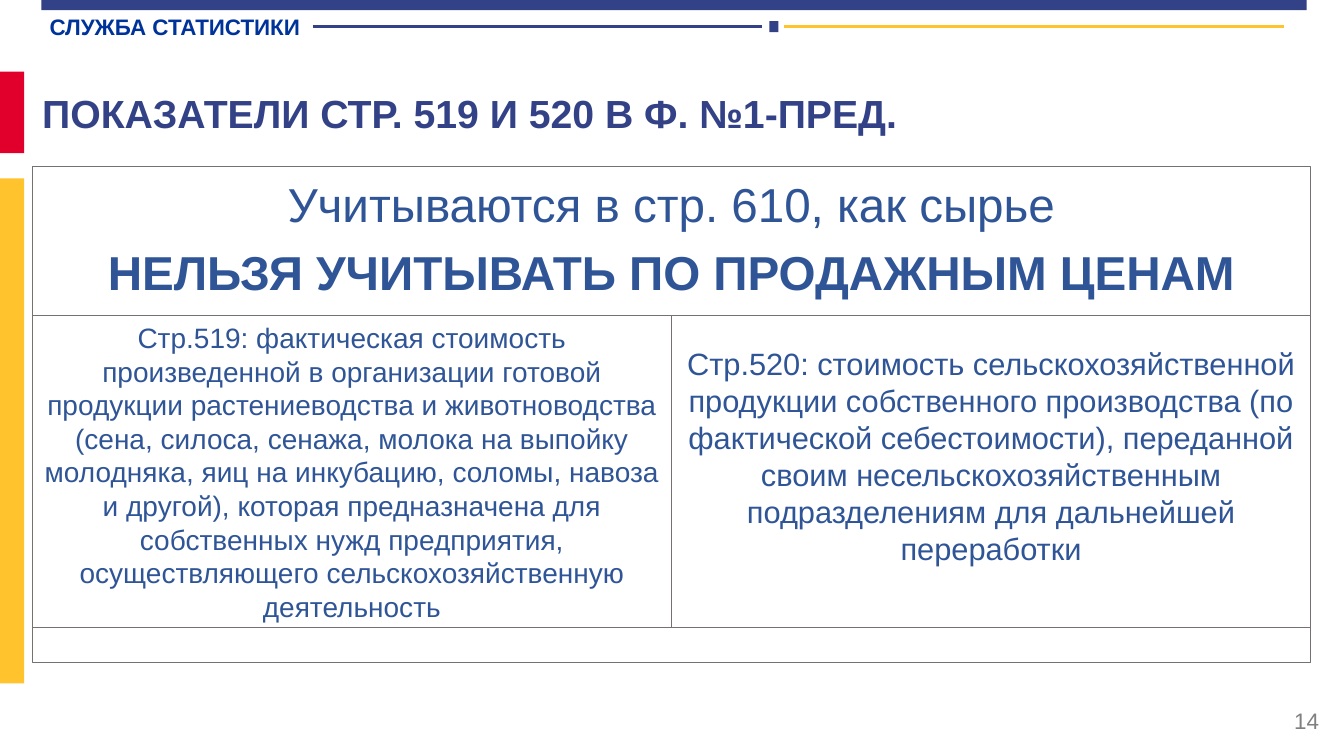
import pptx
import pptx.dml.color
import pptx.enum.shapes
import pptx.enum.text
import pptx.oxml.ns
import pptx.util
from lxml import etree

RGB = pptx.dml.color.RGBColor
NAVY = RGB(0x33, 0x42, 0x86)
RED = RGB(0xE1, 0x00, 0x2B)
YELLOW = RGB(0xFF, 0xC3, 0x2E)
BLUE = RGB(0x2F, 0x55, 0x97)
AGENCY_BLUE = RGB(0x00, 0x33, 0x99)
GRAY = RGB(0x80, 0x80, 0x80)
BORDER = RGB(0x76, 0x71, 0x71)
WHITE = RGB(0xFF, 0xFF, 0xFF)

ALIGN = pptx.enum.text.PP_ALIGN
ANCHOR = pptx.enum.text.MSO_ANCHOR

AGENCY = "СЛУЖБА СТАТИСТИКИ"
TITLE = "ПОКАЗАТЕЛИ СТР. 519 И 520 В Ф. №1-ПРЕД."
RULES = [("Учитываются в стр. 610, как сырье", False),
         ("НЕЛЬЗЯ УЧИТЫВАТЬ ПО ПРОДАЖНЫМ ЦЕНАМ", True)]
LINE_519 = ("Стр.519: фактическая стоимость произведенной в организации готовой "
            "продукции растениеводства и животноводства (сена, силоса, сенажа, "
            "молока на выпойку молодняка, яиц на инкубацию, соломы, навоза и другой), "
            "которая предназначена для собственных нужд предприятия, "
            "осуществляющего сельскохозяйственную деятельность")
LINE_520 = ("Стр.520: стоимость сельскохозяйственной продукции собственного "
            "производства (по фактической себестоимости), переданной своим "
            "несельскохозяйственным подразделениям для дальнейшей переработки")


def px(length):
    """100 px to the inch."""
    return pptx.util.Emu(length * 9144)


def add_box(slide, box, fill, border=None, width=1):
    rect = slide.shapes.add_shape(
        pptx.enum.shapes.MSO_SHAPE.RECTANGLE, *map(px, box))
    rect.shadow.inherit = False
    rect.fill.solid()
    rect.fill.fore_color.rgb = fill
    if border is None:
        rect.line.fill.background()
    else:
        rect.line.color.rgb = border
        rect.line.width = pptx.util.Pt(width)
    return rect


def add_rule(slide, start, end, y, color):
    rule = slide.shapes.add_connector(
        pptx.enum.shapes.MSO_CONNECTOR.STRAIGHT, px(start), px(y), px(end), px(y))
    rule.line.color.rgb = color
    rule.line.width = pptx.util.Pt(2)
    etree.SubElement(rule._element.spPr, pptx.oxml.ns.qn("a:effectLst"))


def write(shape, lines, size, color, align=ALIGN.CENTER, anchor=ANCHOR.MIDDLE,
          insets=(10, 5, 10, 5)):
    """Write (text, bold) lines; insets run left, top, right, bottom."""
    frame = shape.text_frame
    frame.word_wrap = True
    frame.vertical_anchor = anchor
    (frame.margin_left, frame.margin_top,
     frame.margin_right, frame.margin_bottom) = map(px, insets)
    for i, (text, bold) in enumerate(lines):
        paragraph = frame.add_paragraph() if i else frame.paragraphs[0]
        paragraph.text = text
        paragraph.alignment = align
        paragraph.font.name = "Arial"
        paragraph.font.size = pptx.util.Pt(size)
        paragraph.font.bold = bold
        paragraph.font.color.rgb = color
    return frame


def add_header(slide, left, top, width):
    add_box(slide, (left, top, width, 10), NAVY)
    agency = add_box(slide, (left - 3, top + 12, 271, 29), WHITE)
    write(agency, [(AGENCY, True)], 16, AGENCY_BLUE)
    # Two rules with a square between them
    add_rule(slide, left + 269, left + 715, top + 26, NAVY)
    add_box(slide, (left + 722, top + 21, 9, 11), NAVY)
    add_rule(slide, left + 737, left + 1232, top + 26, YELLOW)


def add_side_bars(slide, left, top, width):
    add_box(slide, (left, top, width, 81), RED)
    add_box(slide, (left, top + 106, width, 501), YELLOW)


def add_title(slide, box):
    title = slide.shapes.add_textbox(*map(px, box))
    write(title, [(TITLE, True)], 28, NAVY, ALIGN.LEFT, ANCHOR.TOP)


def add_scheme(slide, left, top, width):
    half = width // 2
    rule_height, detail_height, strip_height = 148, 310, 34
    detail_top = top + rule_height

    # General rule
    general = add_box(slide, (left, top, width, rule_height), WHITE, BORDER, 0.75)
    frame = write(general, RULES, 34, BLUE, insets=(14, 14, 14, 14))
    for paragraph in frame.paragraphs:
        paragraph.line_spacing = 0.9
        paragraph.space_after = pptx.util.Pt(12)

    # The two form lines side by side
    details = [(LINE_519, 20, (8, 8, 8, 8)), (LINE_520, 22, (9, 9, 9, 41))]
    for i, (text, size, insets) in enumerate(details):
        detail = add_box(slide, (left + i * half, detail_top, half, detail_height),
                         WHITE, BORDER)
        write(detail, [(text, False)], size, BLUE, insets=insets)

    # Empty closing strip
    add_box(slide, (left, detail_top + detail_height, width, strip_height),
            WHITE, BORDER, 0.75)


def add_page_number(slide, box):
    number = slide.shapes.add_textbox(*map(px, box))
    write(number, [("14", False)], 16, GRAY, ALIGN.RIGHT)


def main():
    deck = pptx.Presentation()
    deck.slide_width, deck.slide_height = px(1333), px(750)
    slide = deck.slides.add_slide(deck.slide_layouts[6])
    add_header(slide, 41, 0, 1255)
    add_side_bars(slide, 0, 71, 24)
    add_title(slide, (32, 84, 1268, 59))
    add_scheme(slide, 32, 165, 1268)
    add_page_number(slide, (1018, 695, 300, 40))
    deck.save("out.pptx")


if __name__ == "__main__":
    main()
